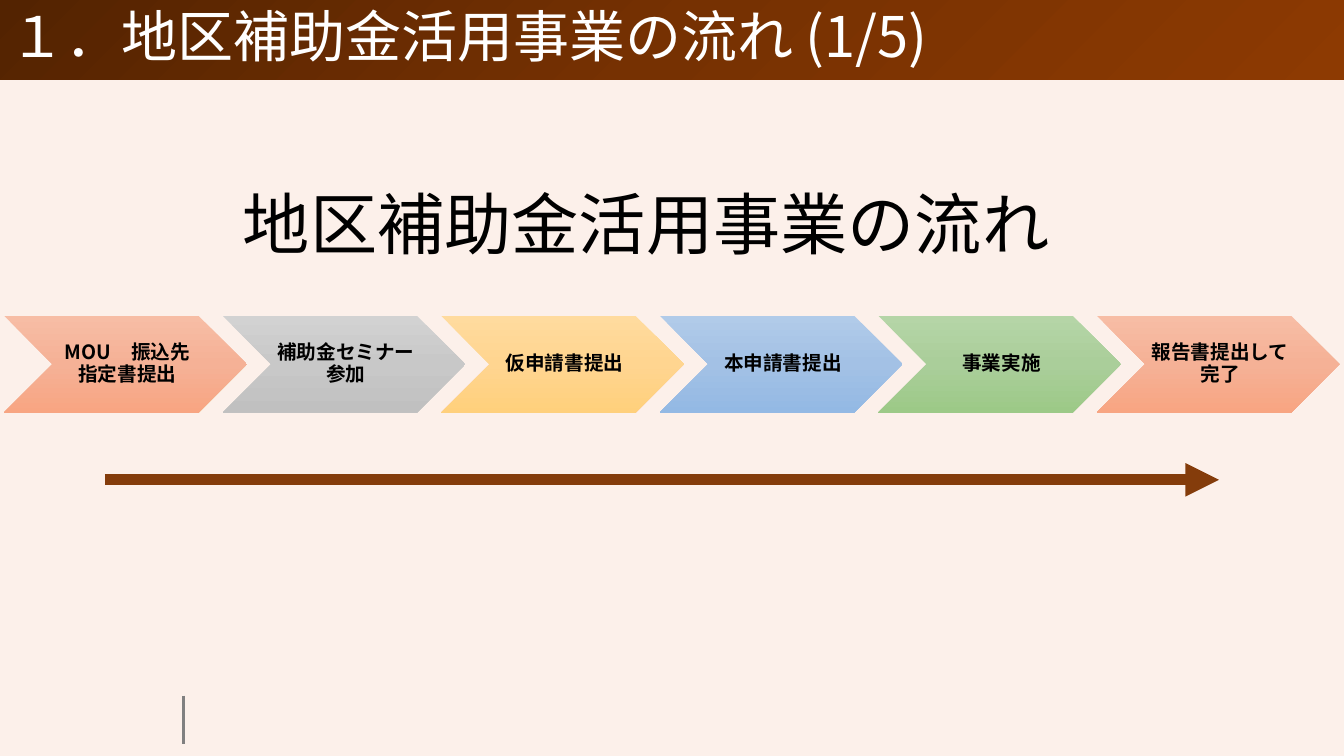
from copy import deepcopy

from pptx import Presentation
from pptx.dml.color import RGBColor
from pptx.enum.shapes import MSO_CONNECTOR, MSO_SHAPE
from pptx.enum.text import MSO_ANCHOR, MSO_AUTO_SIZE, PP_ALIGN
from pptx.oxml.ns import qn
from pptx.util import Inches, Pt

CHEVRON, RECTANGLE = MSO_SHAPE.CHEVRON, MSO_SHAPE.RECTANGLE
STRAIGHT = MSO_CONNECTOR.STRAIGHT
LEFT, CENTER = PP_ALIGN.LEFT, PP_ALIGN.CENTER
TOP, MIDDLE = MSO_ANCHOR.TOP, MSO_ANCHOR.MIDDLE
GROW = MSO_AUTO_SIZE.SHAPE_TO_FIT_TEXT

CORAL = ("F7BDA5", "F5B196", "F8A582")
GRAY = ("D2D2D2", "C8C8C8", "C0C0C0")
YELLOW = ("FFDB9E", "FFD590", "FFD07C")
BLUE = ("B1CBE9", "A3C1E5", "93B9E4")
GREEN = ("B5D5A7", "AACE9A", "9CC987")
BROWN = ("532301", "763102", "8D3A02")

STEPS = [
    ("MOU　振込先指定書提出", CORAL),
    ("補助金セミナー参加", GRAY),
    ("仮申請書提出", YELLOW),
    ("本申請書提出", BLUE),
    ("事業実施", GREEN),
    ("報告書提出して完了", CORAL),
]
STEP_LEFT, STEP_PITCH = 0.3, 16.26


def color(hex_code):
    """Turn a hex string into a colour."""
    return RGBColor.from_string(hex_code)


def write(frame, text, *, size, font, ink="000000", bold=False, align=LEFT,
          anchor=TOP, spacing=1.0, after=0, insets=(0.1, 0.05, 0.1, 0.05)):
    """Put formatted text into a frame."""
    frame.word_wrap = True
    frame.vertical_anchor = anchor
    (frame.margin_left, frame.margin_top,
     frame.margin_right, frame.margin_bottom) = map(Inches, insets)
    paragraph = frame.paragraphs[0]
    paragraph.alignment = align
    paragraph.line_spacing = spacing
    paragraph.space_after = Pt(after)
    run = paragraph.add_run()
    run.text = text
    run.font.size = Pt(size)
    run.font.bold = bold
    run.font.color.rgb = color(ink)
    run.font.name = font
    east_asian = run.font._element.makeelement(qn("a:ea"), {"typeface": font})
    run.font._element.find(qn("a:latin")).addnext(east_asian)


class FlowSlide:
    """Draw elements on one slide, placed in percent of its size."""

    font = "Noto Sans CJK JP"

    def __init__(self, deck, background):
        """Add a blank slide with a plain background."""
        self.width, self.height = deck.slide_width, deck.slide_height
        self.slide = deck.slides.add_slide(deck.slide_layouts[6])
        self.slide.background.fill.solid()
        self.slide.background.fill.fore_color.rgb = color(background)

    def place(self, *shares):
        """Convert alternating x and y percentages to lengths."""
        sizes = (self.width, self.height) * 2
        return [round(size * share / 100) for size, share in zip(sizes, shares)]

    def block(self, kind, box, shades, angle, text, **style):
        """Add a gradient shape with its text."""
        shape = self.slide.shapes.add_shape(kind, *self.place(*box))
        shape.shadow.inherit = False
        shape.line.fill.background()
        shape.fill.gradient()
        stop_list = next(shape._element.spPr.iter(qn("a:gsLst")))
        stop_list.insert(1, deepcopy(stop_list[0]))
        for stop, shade, position in zip(shape.fill.gradient_stops, shades, (0, 0.5, 1)):
            stop.position = position
            stop.color.rgb = color(shade)
        shape.fill.gradient_angle = 360 - angle
        write(shape.text_frame, text, font=self.font, anchor=MIDDLE, spacing=0.9, **style)

    def label(self, box, text, **style):
        """Add a text box that grows with its text."""
        frame = self.slide.shapes.add_textbox(*self.place(*box)).text_frame
        write(frame, text, font=self.font, **style)
        frame.auto_size = GROW

    def line(self, ends, ink, weight, arrow=False):
        """Add a straight line, with an arrowhead if asked."""
        connector = self.slide.shapes.add_connector(STRAIGHT, *self.place(*ends))
        connector.line.color.rgb = color(ink)
        connector.line.width = Pt(weight)
        properties = connector._element.spPr
        if arrow:
            outline = properties.find(qn("a:ln"))
            outline.append(outline.makeelement(qn("a:tailEnd"), {"type": "triangle"}))
        properties.append(properties.makeelement(qn("a:effectLst"), {}))


def main():
    """Build and save the slide."""
    deck = Presentation()
    deck.slide_width, deck.slide_height = Inches(13.33), Inches(7.5)
    flow = FlowSlide(deck, "FCF0EA")
    flow.block(RECTANGLE, (0, 0, 100, 10.53), BROWN, 45,
               "１．地区補助金活用事業の流れ (1/5)", size=40, ink="FFFFFF")
    flow.line((13.65, 92, 13.65, 98.4), "808080", 2)
    flow.label((17.33, 23.47, 61.75, 12.13), "地区補助金活用事業の流れ", size=48)
    flow.line((7.8, 63.47, 90.7, 63.47), "843C0B", 8, arrow=True)
    for index, (step, shades) in enumerate(STEPS):
        left = STEP_LEFT + index * STEP_PITCH
        flow.block(CHEVRON, (left, 41.75, 18.07, 12.85), shades, 90, step, size=14,
                   bold=True, align=CENTER, after=5, insets=(0.06, 0.02, 0.02, 0.02))
    deck.save("out.pptx")


if __name__ == "__main__":
    main()
